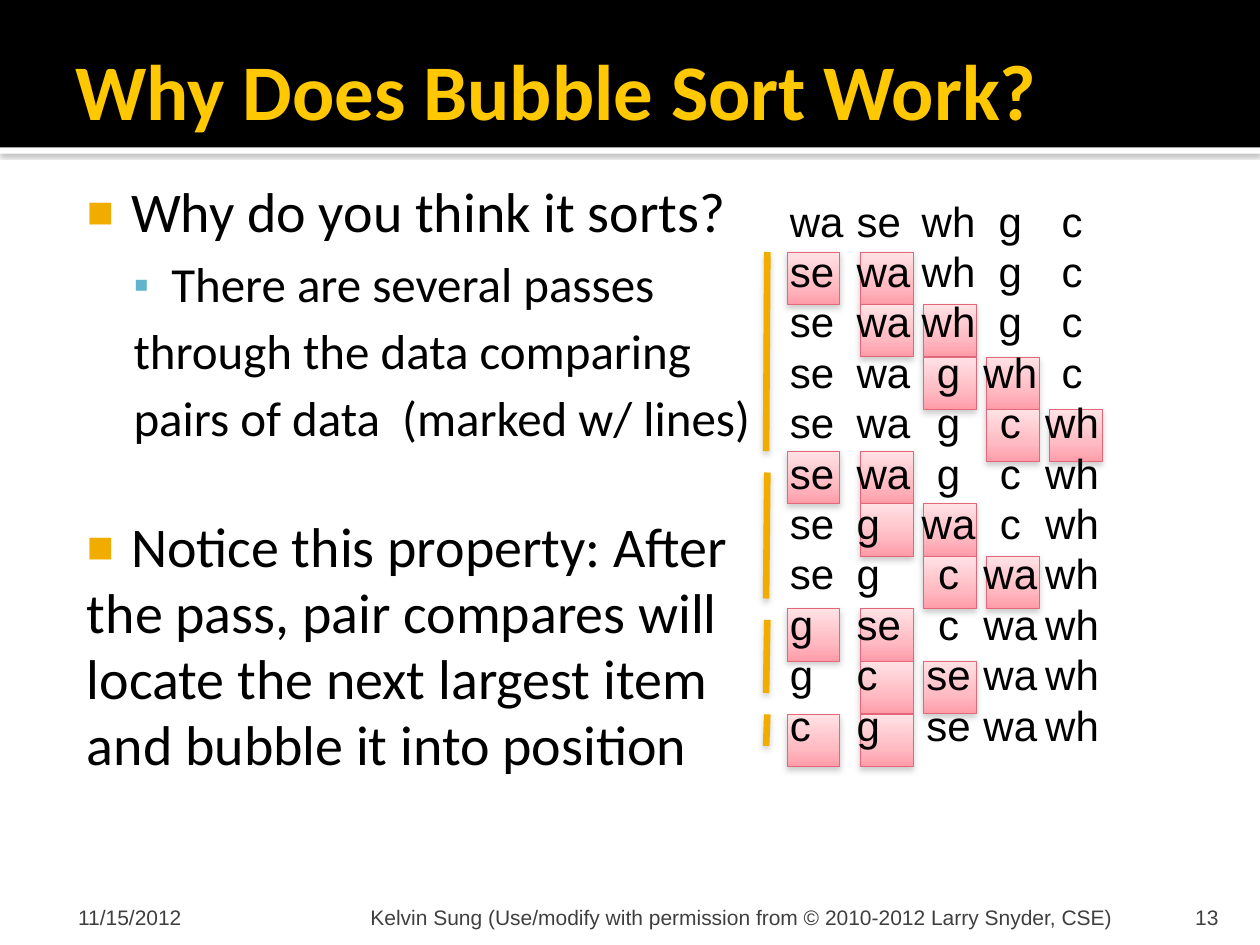
from pptx import Presentation
from pptx.dml.color import RGBColor
from pptx.enum.shapes import MSO_CONNECTOR, MSO_SHAPE
from pptx.enum.text import MSO_ANCHOR as Anchor, MSO_AUTO_SIZE as AutoSize, PP_ALIGN as Align
from pptx.oxml import parse_xml
from pptx.oxml.ns import qn
from pptx.util import Inches, Pt
from lxml.etree import SubElement

NS = 'xmlns:a="http://schemas.openxmlformats.org/drawingml/2006/main"'
GOLD = "F0AD00"

# Comparison grid: column edges and cell size in inches
COLUMNS = [6.25, 6.83, 7.33, 7.83, 8.33]
CELL = 5 / 12
# Each pass: top of its first pair, number of pairs, marker top and bottom
PASSES = [
    (2, 4, 2, 3.58),
    (3.58, 3, 3.75, 4.75),
    (4.83, 2, 4.92, 5.5),
    (5.67, 1, 5.67, 5.92),
]
SORT_STEPS = [
    "wa se wh g c", "se wa wh g c", "se wa wh g c", "se wa g wh c",
    "se wa g c wh", "se wa g c wh", "se g wa c wh", "se g c wa wh",
    "g se c wa wh", "g c se wa wh", "c g se wa wh",
]
STEP_TABS = [("l", 0.53), ("ctr", 1.26), ("ctr", 1.75), ("ctr", 2.24)]

# Level, bullet shown, space before in points, text
BODY = [
    (0, True, 0, "Why do you think it sorts?"),
    (1, True, 5.6, "There are several passes"),
    (1, False, 5.6, "through the data comparing"),
    (1, False, 5.6, "pairs of data  (marked w/ lines)"),
    (0, True, 38, "Notice this property: After"),
    (0, False, 0, "the pass, pair compares will"),
    (0, False, 0, "locate the next largest item"),
    (0, False, 0, "and bubble it into position"),
]
# Per level: font size, left margin, indent, bullet, bullet colour, bullet size
LEVELS = [
    (32, 0.48, -0.35, "■", GOLD, 80),
    (28, 0.8, -0.3, "▪", "60B5CC", 90),
]


def color(code):
    return RGBColor.from_string(code)


def add_span(para, text, size, font, code, bold=False):
    span = para.add_run()
    span.text = text
    span.font.size, span.font.name, span.font.bold = Pt(size), font, bold
    span.font.color.rgb = color(code)


def set_frame(box, at, insets, anchor=Anchor.TOP, wrap=True):
    box.left, box.top, box.width, box.height = map(Inches, at)
    frame = box.text_frame
    frame.auto_size, frame.word_wrap = AutoSize.NONE, wrap
    frame.vertical_anchor = anchor
    (frame.margin_left, frame.margin_top,
     frame.margin_right, frame.margin_bottom) = map(Inches, insets)
    return frame


def add_shadow(item, alpha, blur, distance):
    props = item.element.spPr
    for old in props.findall(qn("a:effectLst")):
        props.remove(old)
    props.append(parse_xml(
        f'<a:effectLst {NS}><a:outerShdw blurRad="{Pt(blur)}" dist="{Pt(distance)}" '
        f'dir="5400000" rotWithShape="0"><a:srgbClr val="808080">'
        f'<a:alpha val="{alpha * 1000}"/></a:srgbClr></a:outerShdw></a:effectLst>'))


def add_rect(page, left, top, width, height):
    box = page.shapes.add_shape(
        MSO_SHAPE.RECTANGLE, *map(Inches, (left, top, width, height)))
    box.shadow.inherit = False
    return box


def add_bar(page, top, height, code):
    bar = add_rect(page, 0, top, 10, height)
    bar.fill.solid()
    bar.fill.fore_color.rgb = color(code)
    bar.line.fill.background()
    page.shapes.title.element.addprevious(bar.element)
    return bar


def add_cell(page, left, top):
    cell = add_rect(page, left, top, CELL, CELL)
    stops = "".join(
        f'<a:gs pos="{place * 1000}"><a:srgbClr val="{code}"/></a:gs>'
        for place, code in [(0, "FFE2E5"), (65, "FFBAC2"), (100, "FF9CA9")])
    cell.element.spPr.find(qn("a:prstGeom")).addnext(parse_xml(
        f'<a:gradFill {NS}><a:gsLst>{stops}</a:gsLst>'
        f'<a:lin ang="5400000" scaled="0"/></a:gradFill>'))
    cell.line.color.rgb = color("E46678")
    cell.line.width = Pt(0.5)
    add_shadow(cell, 38, 3.5, 2)


def add_marker(page, top, bottom):
    line = page.shapes.add_connector(
        MSO_CONNECTOR.STRAIGHT, *map(Inches, (6.09, top, 6.08, bottom)))
    line.line.color.rgb = color(GOLD)
    line.line.width = Pt(3.78)
    add_shadow(line, 38, 3.5, 2)


def fill_title(page):
    frame = set_frame(page.shapes.title, (0.5, 0.17, 9, 1.08),
                      (0.1, 0.05, 0.05, 0.05), Anchor.MIDDLE)
    para = frame.paragraphs[0]
    para.alignment = Align.LEFT
    add_span(para, "Why Does Bubble Sort Work?", 45, "Calibri", "FFC800", True)


def fill_body(page):
    frame = set_frame(page.placeholders[1], (0.5, 1.33, 9, 5.67), (0.06, 0.1, 0.1, 0.05))
    for index, (level, bulleted, before, text) in enumerate(BODY):
        para = frame.add_paragraph() if index else frame.paragraphs[0]
        size, margin, indent, mark, mark_color, mark_size = LEVELS[level]
        para.level = level
        para.line_spacing, para.space_before = 0.98, Pt(before)
        props = para._p.get_or_add_pPr()
        props.set("marL", str(Inches(margin)))
        props.set("indent", str(Inches(indent)))
        if bulleted:
            tint = SubElement(props, qn("a:buClr"))
            SubElement(tint, qn("a:srgbClr"), val=mark_color)
            SubElement(props, qn("a:buSzPct"), val=str(mark_size * 1000))
            SubElement(props, qn("a:buFont"), typeface="Arial")
            SubElement(props, qn("a:buChar"), char=mark)
        else:
            SubElement(props, qn("a:buNone"))
        add_span(para, text, size, "Calibri", "000000")


def add_steps(page):
    box = page.shapes.add_textbox(0, 0, 0, 0)
    frame = set_frame(box, (6.17, 1.5, 3, 4.54), (0.1, 0.05, 0.1, 0.05))
    for index, step in enumerate(SORT_STEPS):
        para = frame.add_paragraph() if index else frame.paragraphs[0]
        tabs = SubElement(para._p.get_or_add_pPr(), qn("a:tabLst"))
        for align, place in STEP_TABS:
            SubElement(tabs, qn("a:tab"), pos=str(Inches(place)), algn=align)
        add_span(para, "\t".join(step.split()), 24, "Arial", "000000")


def add_footer(page, left, width, insets, text, align=Align.LEFT):
    box = page.shapes.add_textbox(0, 0, 0, 0)
    frame = set_frame(box, (left, 7.08, width, 0.3), insets, Anchor.BOTTOM)
    frame.paragraphs[0].alignment = align
    add_span(frame.paragraphs[0], text, 12, "Arial", "3F3F3F")


def main():
    deck = Presentation()
    deck.slide_width, deck.slide_height = Inches(10), Inches(7.5)
    page = deck.slides.add_slide(deck.slide_layouts[1])

    # Header band, title and list
    add_shadow(add_bar(page, 1.17, 0.05, "FFFFFF"), 60, 2.5, 0.8)
    add_bar(page, 0, 1.17, "000000")
    fill_title(page)
    fill_body(page)

    # Footer
    add_footer(page, 0.5, 2.33, (0.12, 0.05, 0.05, 0), "11/15/2012")
    add_footer(page, 2.89, 6.02, (0.05, 0.05, 0.05, 0),
               "Kelvin Sung (Use/modify with permission from © 2010-2012 Larry Snyder, CSE)")
    add_footer(page, 8.97, 0.8, (0.1, 0.05, 0.1, 0), "13", Align.RIGHT)

    # Compared pairs step one column right on each row of a pass
    for top, pairs, _, _ in PASSES:
        for row in range(pairs):
            for left in COLUMNS[row:row + 2]:
                add_cell(page, left, top + row * CELL)
    add_steps(page)
    for _, _, start, end in PASSES:
        add_marker(page, start, end)

    deck.save("out.pptx")


if __name__ == "__main__":
    main()
